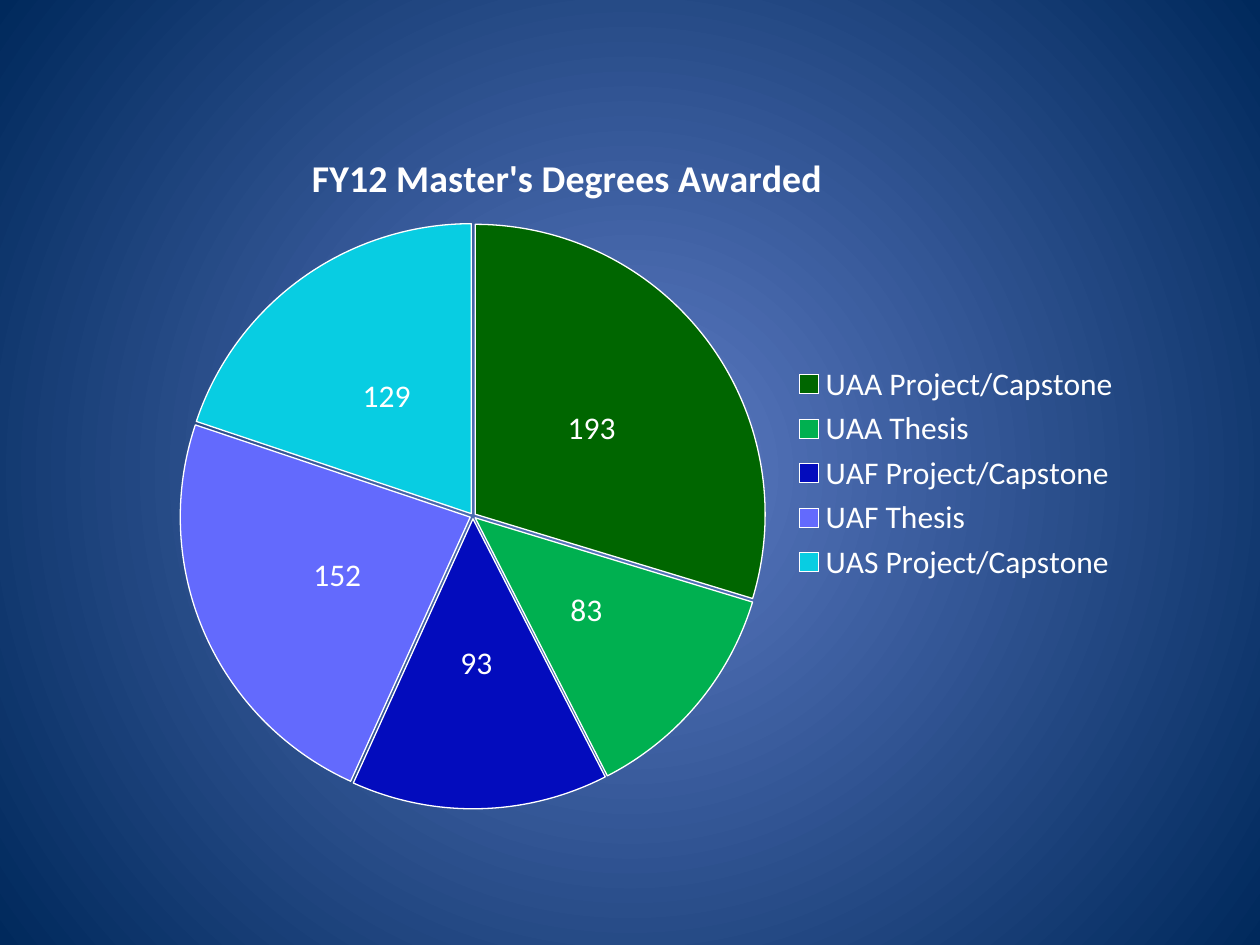
import pptx
import pptx.chart.data
import pptx.dml.color
import pptx.enum.chart
import pptx.oxml
import pptx.oxml.ns
import pptx.util

Cm = pptx.util.Cm
Pt = pptx.util.Pt

FONT = "Calibri"
WHITE = "FFFFFF"
DEGREES = [
    ("UAA Project/Capstone", 193, "006600"),
    ("UAA Thesis", 83, "00B050"),
    ("UAF Project/Capstone", 93, "030CBD"),
    ("UAF Thesis", 152, "636AFD"),
    ("UAS Project/Capstone", 129, "08CDE2"),
]


def colour(hex_text):
    return pptx.dml.color.RGBColor.from_string(hex_text)


def format_font(font, size, bold=False):
    font.name = FONT
    font.size = Pt(size)
    font.bold = bold
    font.color.rgb = colour(WHITE)


def add_text(frame, text, **look):
    span = frame.paragraphs[0].add_run()
    span.text = text
    format_font(span.font, **look)


def paint_background(page, centre, edge):
    """Radial gradient from the middle of the page outwards."""
    fill = page.background.fill
    fill.gradient()
    for stop, shade in zip(fill.gradient_stops, (centre, edge)):
        stop.color.rgb = colour(shade)
    linear = page.element.xpath(".//a:lin")[0]
    radial = pptx.oxml.parse_xml(
        f'<a:path {pptx.oxml.ns.nsdecls("a")} path="circle">'
        '<a:fillToRect l="50000" t="50000" r="50000" b="50000"/></a:path>'
    )
    linear.getparent().replace(linear, radial)


def place_part(chart, name, index, **fractions):
    """Fix a chart part at fractions (x, y, w, h) of the chart's size."""
    part = chart.element.xpath(f"c:chart/c:{name}")[0]
    for old in part.xpath("c:layout"):
        part.remove(old)
    target = '<c:layoutTarget val="inner"/>' if name == "plotArea" else ""
    modes = "".join(f'<c:{key}Mode val="edge"/>' for key in "xy")
    values = "".join(f'<c:{key} val="{value}"/>' for key, value in fractions.items())
    part.insert(index, pptx.oxml.parse_xml(
        f'<c:layout {pptx.oxml.ns.nsdecls("c")}><c:manualLayout>'
        f"{target}{modes}{values}</c:manualLayout></c:layout>"
    ))


def outline(line):
    line.color.rgb = colour(WHITE)
    line.width = Pt(0.75)


def format_slices(plot):
    plot.vary_by_categories = True
    series = plot.series[0]
    outline(series.format.line)
    for index, (_, _, shade) in enumerate(DEGREES):
        look = series.points[index].format
        look.fill.solid()
        look.fill.fore_color.rgb = colour(shade)
        outline(look.line)
    first_point = series.points[0].format and plot.series[0].format
    explosion = pptx.oxml.parse_xml(
        f'<c:explosion {pptx.oxml.ns.nsdecls("c")} val="1"/>'
    )
    chart_points = plot.chart.element.xpath(".//c:ser/c:dPt")
    chart_points[0].addprevious(explosion)

    plot.has_data_labels = True
    labels = plot.data_labels
    labels.show_value = True
    labels.show_percentage = False
    labels.position = pptx.enum.chart.XL_LABEL_POSITION.CENTER
    format_font(labels.font, size=18)


def add_degree_chart(page, left, top, width, height):
    data = pptx.chart.data.CategoryChartData()
    data.categories = [name for name, _, _ in DEGREES]
    data.add_series("Series 1", [count for _, count, _ in DEGREES])
    chart = page.shapes.add_chart(
        pptx.enum.chart.XL_CHART_TYPE.PIE, left, top, width, height, data
    ).chart
    format_font(chart.font, size=18)

    chart.has_title = True
    add_text(chart.chart_title.text_frame, "FY12 Master's Degrees Awarded",
             size=21.6, bold=True)
    chart.has_legend = True
    chart.legend.position = pptx.enum.chart.XL_LEGEND_POSITION.RIGHT
    chart.legend.include_in_layout = False
    format_font(chart.legend.font, size=18)
    format_slices(chart.plots[0])

    place_part(chart, "title", 1, x=0.16, y=0.04)
    place_part(chart, "plotArea", 0, x=0.03, y=0.15, w=0.6, h=0.82)
    place_part(chart, "legend", 1, x=0.65, y=0.34, w=0.34, h=0.32)


def main():
    deck = pptx.Presentation()
    deck.slide_width = Cm(25.4)
    deck.slide_height = Cm(19.05)
    page = deck.slides.add_slide(deck.slide_layouts[6])
    paint_background(page, centre="5E7CC5", edge="00295C")
    add_degree_chart(page, Cm(2.97), Cm(2.34), Cm(19.89), Cm(14.4))
    deck.save("out.pptx")


if __name__ == "__main__":
    main()
